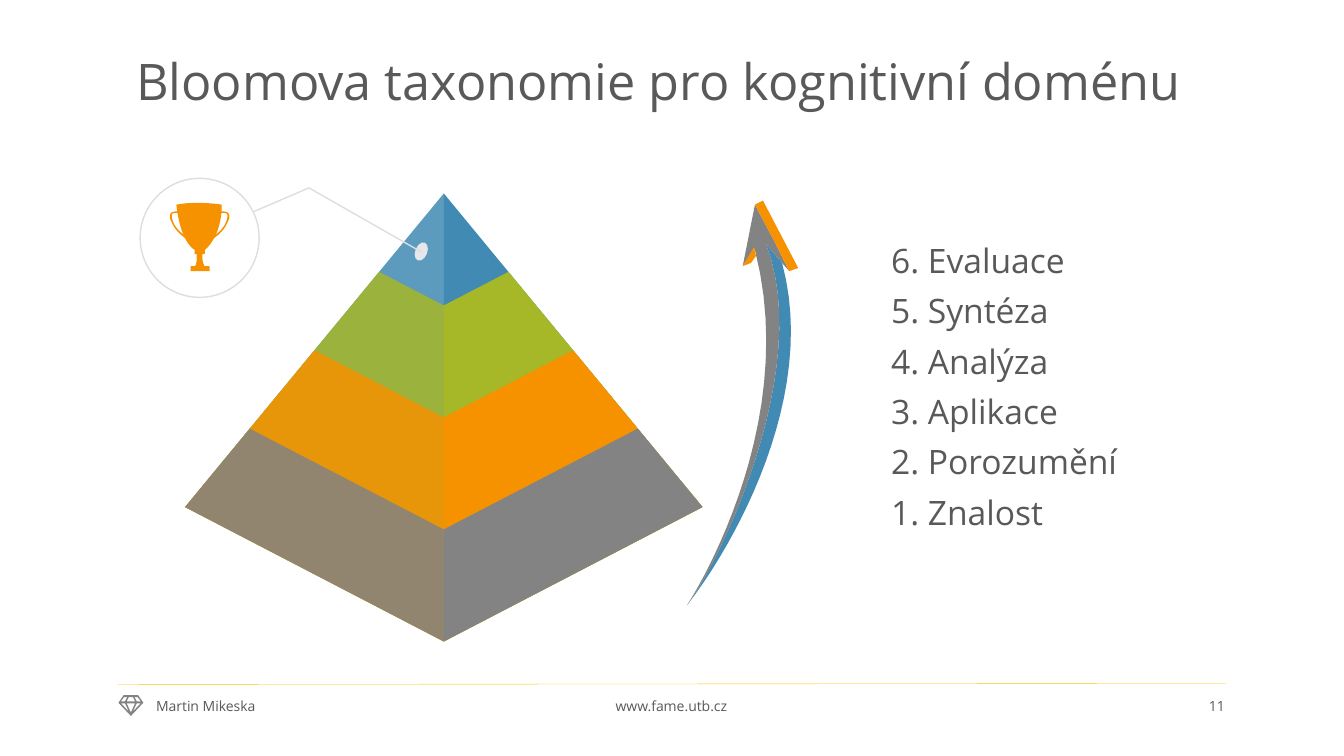
from dataclasses import dataclass
from lxml import etree
from pptx import Presentation
from pptx.dml.color import RGBColor
from pptx.enum import shapes as sh, text as tx
from pptx.oxml import ns
from pptx.util import Pt


@dataclass(frozen=True)
class Theme:
    font: str = "Open Sans"
    ink: str = "595959"
    blue: str = "418AB3"
    green: str = "A6B727"
    orange: str = "F69200"
    gray: str = "838383"
    pale: str = "DCDEE0"
    dot: str = "E6E7EA"
    white: str = "FFFFFF"
    rule: str = "FEC306"
    head: int = 36
    body: int = 24
    foot: int = 10


T = Theme()
TITLE = "Bloomova taxonomie pro kognitivní doménu"
LEVELS = ["6. Evaluace", "5. Syntéza", "4. Analýza",
          "3. Aplikace", "2. Porozumění", "1. Znalost"]
FOOTER = [
    ("www.fame.utb.cz", (401.8, 495.4, 155.5, 18.7), tx.PP_ALIGN.CENTER),
    ("Martin Mikeska", (104.4, 495.4, 155.5, 18.7), tx.PP_ALIGN.LEFT),
    ("11", (789.1, 496.1, 92.9, 18), tx.PP_ALIGN.RIGHT),
]

# Pyramid: apex, tier colours, and the steps from one tier to the next
APEX = (317, 138.2)
TIERS = [T.blue, T.green, T.orange, T.gray]
HALF, DROP, RISE = 46.2, 80, 56

# Outlines: a pair is a corner, six numbers are a Bézier curve
GEM_MID = 93.5
GEM = [(88.3, 496.6), (98.7, 496.6), (102.4, 502), (93.5, 511.4), (84.6, 502)]
GEM_SIDE = [
    [(88.6, 498), (90.9, 498), (89.2, 501.1), (86.3, 501.1)],
    [(86.4, 502.4), (89.3, 502.4), (92.1, 508.3)],
]
GEM_CORE = [
    [(92, 498), (95, 498), (96.6, 501.1), (90.4, 501.1)],
    [(90.5, 502.4), (96.5, 502.4), (93.5, 509)],
]

CUP_MID = 142.6
HANDLE = [
    (151.9, 170.6), (151.2, 169.2), (160.6, 164.2, 162, 157, 162, 157),
    (162.7, 154.8, 162.7, 153.4, 162, 152.6),
    (160.6, 151.9, 157.7, 151.9, 157, 152.6), (156.2, 151.2),
    (157, 151.2, 160.6, 150.5, 162.7, 151.9),
    (164.2, 153.4, 164.2, 154.8, 163.4, 157),
    (162.7, 157.7, 161.3, 164.9, 151.9, 170.6),
]
BOWL = [
    (126, 146.2), (126, 146.2, 128.2, 173.5, 140.4, 179.3), (145.4, 179.3),
    (145.4, 179.3, 158.4, 170.6, 158.4, 146.2),
    (158.4, 146.2, 141.1, 143.3, 126, 146.2),
]
STEM = [
    (140.4, 181.4), (140.4, 181.4, 141.1, 189.4, 139, 190.1), (146.2, 190.1),
    (146.2, 190.1, 144, 187.2, 144.7, 180.7),
]
BANDS = [(139, 178.6, 7.4, 2.4), (139, 180.7, 7.2, 0.9),
         (136.1, 190.1, 13.7, 3.6)]

TIP = (491, 432)
ARROW = [
    (T.blue, [TIP, (524.2, 389.5, 584.6, 283, 558.7, 187.9), (547.2, 174.2),
              (581.8, 264.2, 512.6, 403.9, *TIP)]),
    (T.gray, [(553, 172.1), (539.3, 146.2), (530.6, 190.1), (538.6, 177.1),
              (539.3, 178.6), (573.1, 308.9, 489.6, 434.2, *TIP),
              (512.6, 403.9, 581.8, 264.2, 547.2, 174.2), (558.7, 187.9),
              (563.8, 193.7), (556.6, 179.3)]),
    (T.orange, [(553, 172.1), (563.8, 193.7), (570.2, 191.5), (545, 143.3),
                (539.3, 146.2)]),
    (T.orange, [(538.6, 176.4), (530.6, 190.1), (536.4, 187.9), (540, 182.9)]),
]
ELBOW = (220.7, 134.2)


def rgb(code):
    return RGBColor.from_string(code)


def trace(path, steps=24):
    """Turn corners and curves into a dense list of points."""
    pts = [path[0]]
    for seg in path[1:]:
        if len(seg) == 2:
            pts.append(seg)
            continue
        a, b, c, d = pts[-1], seg[:2], seg[2:4], seg[4:]
        for i in range(1, steps + 1):
            t = i / steps
            s = 1 - t
            pts.append(tuple(
                s**3 * a[k] + 3 * s * s * t * b[k] + 3 * s * t * t * c[k]
                + t**3 * d[k] for k in (0, 1)))
    return [(Pt(x), Pt(y)) for x, y in pts]


def flip(path, mid):
    """Mirror a path about the upright line x = mid."""
    return [tuple(2 * mid - v if k % 2 == 0 else v for k, v in enumerate(seg))
            for seg in path]


def paint(shape, fill, line=None, alpha=None):
    shape.shadow.inherit = False
    shape.fill.solid()
    shape.fill.fore_color.rgb = rgb(fill)
    if line:
        shape.line.color.rgb = rgb(line)
        shape.line.width = Pt(1)
    else:
        shape.line.fill.background()
    if alpha:
        clr = shape.element.xpath("./p:spPr/a:solidFill/a:srgbClr")[0]
        etree.SubElement(clr, ns.qn("a:alpha"), val=str(alpha * 1000))


def draw(slide, paths, fill, alpha=None):
    """Fill one shape; any path after the first cuts a hole."""
    first, *holes = [trace(p) for p in paths]
    pen = slide.shapes.build_freeform(*first[0], scale=1.0)
    pen.add_line_segments(first[1:], close=True)
    for hole in holes:
        pen.move_to(*hole[0])
        pen.add_line_segments(hole[1:], close=True)
    paint(pen.convert_to_shape(), fill, alpha=alpha)


def preset(slide, kind, box, fill, line=None):
    shape = slide.shapes.add_shape(kind, *map(Pt, box))
    paint(shape, fill, line)
    return shape


def link(slide, start, end, color, width):
    line = slide.shapes.add_connector(
        sh.MSO_CONNECTOR.STRAIGHT, *map(Pt, start + end))
    line.line.color.rgb = rgb(color)
    line.line.width = Pt(width)
    etree.SubElement(line.element.spPr, ns.qn("a:effectLst"))


def style(par, size, align, space=0.9):
    par.font.name, par.font.size = T.font, Pt(size)
    par.font.color.rgb = rgb(T.ink)
    par.alignment, par.line_spacing = align, space


def place(shape, box):
    shape.left, shape.top, shape.width, shape.height = map(Pt, box)
    frame = shape.text_frame
    frame.word_wrap = True
    frame.auto_size = tx.MSO_AUTO_SIZE.NONE
    frame.vertical_anchor = tx.MSO_ANCHOR.MIDDLE
    return frame


def write(slide):
    frame = place(slide.shapes.title, (59, 28, 823, 65))
    frame.text = TITLE
    style(frame.paragraphs[0], T.head, tx.PP_ALIGN.CENTER)
    frame = place(slide.placeholders[1], (636.5, 119.5, 306, 316))
    frame.margin_left = frame.margin_right = 0
    frame.margin_top = frame.margin_bottom = 0
    frame.text = "\n".join(LEVELS)
    for i, par in enumerate(frame.paragraphs):
        props = par._p.get_or_add_pPr()
        props.set("marL", "0")
        props.set("indent", "0")
        etree.SubElement(props, ns.qn("a:buNone"))
        style(par, T.body, tx.PP_ALIGN.LEFT)
        par.space_before = Pt(10 if i else 0)
    for words, box, align in FOOTER:
        frame = place(slide.shapes.add_textbox(*map(Pt, box)), box)
        frame.text = words
        style(frame.paragraphs[0], T.foot, align)


def pyramid(slide):
    x, y = APEX
    count = len(TIERS)
    for side, alpha in ((1, None), (-1, 85)):
        for i, color in enumerate(TIERS):
            spine = [(x, y + DROP * k) for k in range(i, count + 1)]
            edge = [(x + side * HALF * k, y + RISE * k)
                    for k in range(count, i, -1)]
            if i:
                edge.append((x + side * HALF * i, y + RISE * i))
            draw(slide, [spine + edge], color, alpha)


def trophy(slide):
    link(slide, (CUP_MID, 167.8), ELBOW, T.pale, 1)
    oval = sh.MSO_SHAPE.OVAL
    preset(slide, oval, (296.6, 172.8, 8.6, 13.7), T.dot).rotation = 201.5
    link(slide, ELBOW, (301, 180), T.pale, 1)
    preset(slide, oval, (100.1, 127.4, 85, 85), T.white, T.pale)
    for path in (HANDLE, flip(HANDLE, CUP_MID), BOWL, STEM):
        draw(slide, [path], T.orange)
    for box in BANDS:
        preset(slide, sh.MSO_SHAPE.ROUNDED_RECTANGLE, box, T.orange)


def main():
    deck = Presentation()
    deck.slide_width, deck.slide_height = Pt(960), Pt(540)
    slide = deck.slides.add_slide(deck.slide_layouts[1])
    link(slide, (84.2, 488.9), (875.5, 488.2), T.rule, 0.25)
    sides = GEM_SIDE + [flip(p, GEM_MID) for p in GEM_SIDE]
    draw(slide, [GEM] + sides + GEM_CORE, T.gray)
    write(slide)
    pyramid(slide)
    trophy(slide)
    for color, path in ARROW:
        draw(slide, [path], color)
    deck.save("out.pptx")


if __name__ == "__main__":
    main()
